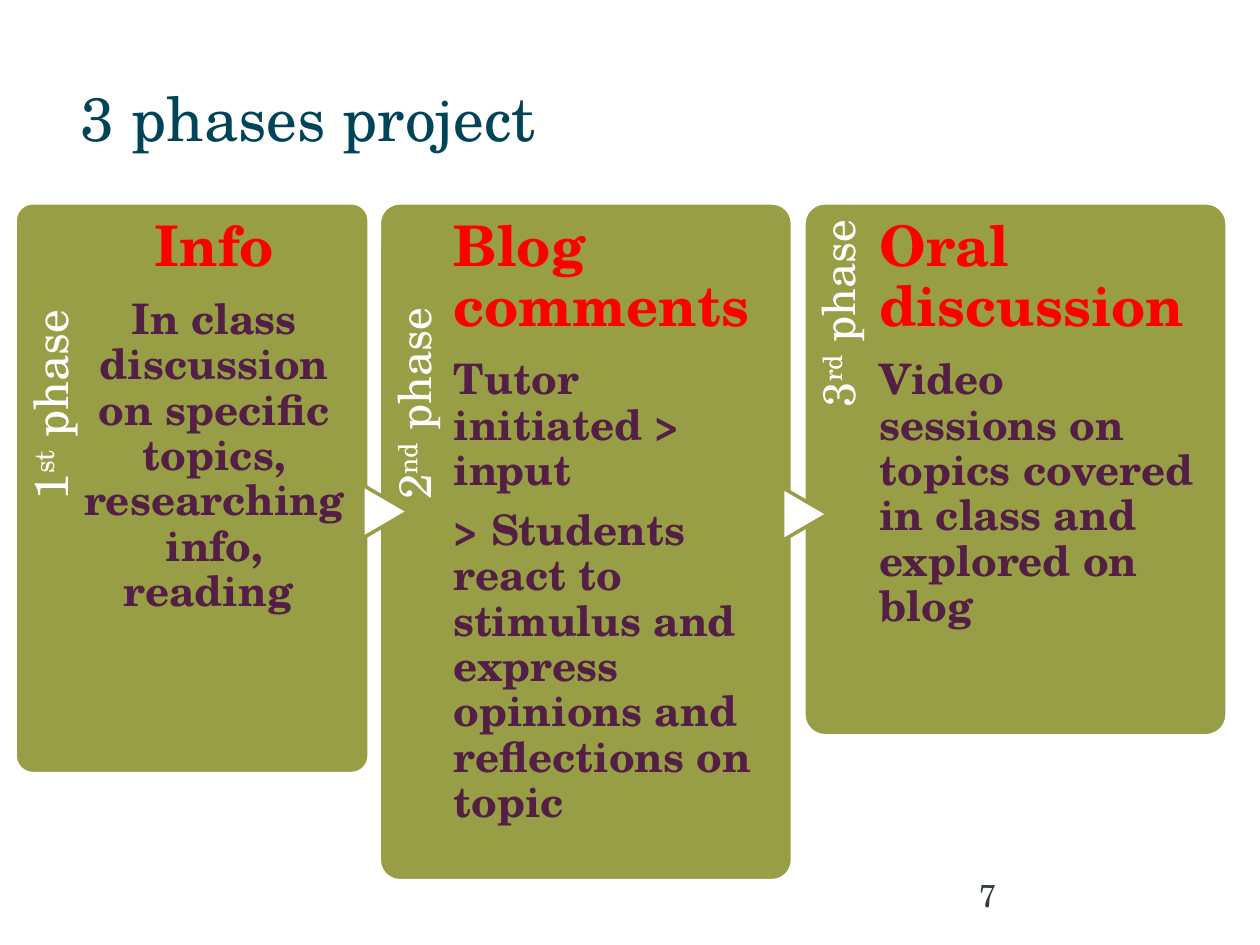
from pptx import Presentation
from pptx.dml.color import RGBColor
from pptx.enum.shapes import MSO_SHAPE as SHAPE
from pptx.enum.text import MSO_ANCHOR as ANCHOR, PP_ALIGN as ALIGN
from pptx.util import Emu, Pt

PX = 9144
FONT = "TeX Gyre Schola"
WHITE = RGBColor(0xFF, 0xFF, 0xFF)
OLIVE = RGBColor(0x97, 0x9E, 0x45)
RED = RGBColor(0xFF, 0x00, 0x00)
PLUM = RGBColor(0x53, 0x1F, 0x44)
TEAL = RGBColor(0x01, 0x43, 0x59)
SLATE = RGBColor(0x32, 0x3D, 0x43)

TOP = 161
PHASES = [
    dict(box=(12, TOP, 281, 453), number="1", suffix="st", label_size=27,
         label_gap=85, body=(53, 210), align=ALIGN.CENTER, heading="Info",
         lines=["In class discussion on specific topics, researching info, reading "]),
    dict(box=(301, TOP, 328, 538), number="2", suffix="nd", label_size=26,
         label_gap=83, body=(59, 244), align=ALIGN.LEFT, heading="Blog comments",
         lines=["Tutor initiated > input",
                "> Students react to stimulus and express opinions and reflections on topic"]),
    dict(box=(638, TOP, 336, 423), number="3", suffix="rd", label_size=26,
         label_gap=13, body=(60, 250), align=ALIGN.LEFT, heading="Oral discussion",
         lines=["Video sessions on topics covered in class and explored on blog"]),
]
ARROWS = [(285, 388, 42, 36), (618, 390, 42, 36)]


def emu(*lengths):
    return [Emu(round(v * PX)) for v in lengths]


def add_run(p, text, size, color, bold=False):
    r = p.add_run()
    r.text = text
    r.font.name = FONT
    r.font.size = Pt(size)
    r.font.bold = bold
    r.font.color.rgb = color
    return r


def add_text_box(s, box, insets=(10, 5, 10, 5)):
    sp = s.shapes.add_textbox(*emu(*box))
    tf = sp.text_frame
    tf.word_wrap = True
    set_insets(tf, insets)
    return sp, tf


def set_insets(tf, insets):
    tf.margin_left, tf.margin_top, tf.margin_right, tf.margin_bottom = emu(*insets)


def add_filled_shape(s, kind, box, fill, line):
    sp = s.shapes.add_shape(kind, *emu(*box))
    sp.shadow.inherit = False
    sp.fill.solid()
    sp.fill.fore_color.rgb = fill
    sp.line.color.rgb = line
    sp.line.width = Pt(2)
    return sp


def add_title(s, box):
    sp = s.shapes.title
    sp.left, sp.top, sp.width, sp.height = emu(*box)
    tf = sp.text_frame
    tf.vertical_anchor = ANCHOR.MIDDLE
    set_insets(tf, (14, 5, 10, 5))
    p = tf.paragraphs[0]
    p.alignment = ALIGN.LEFT
    add_run(p, "3 phases project", 35, TEAL)


def add_label(s, box, phase):
    x, y, w, h = box
    length, depth = 0.82 * h, 0.2 * w
    left = x + (depth - length) / 2
    top = y + (length - depth) / 2
    sp, tf = add_text_box(s, (left, top, length, depth),
                          (0, 10, phase["label_gap"], 0))
    sp.rotation = 270
    p = tf.paragraphs[0]
    p.alignment = ALIGN.RIGHT
    p.line_spacing = 0.9
    size = phase["label_size"]
    add_run(p, phase["number"], size, WHITE)
    r = add_run(p, phase["suffix"], size, WHITE)
    r.font._element.set("baseline", "30000")
    add_run(p, " phase", size, WHITE)


def add_body(s, box, phase):
    x, y, w, h = box
    offset, width = phase["body"]
    sp, tf = add_text_box(s, (x + offset, y, width, h), (0, 12, 0, 0))
    rows = [(phase["heading"], 32, RED)]
    rows += [(line, 24, PLUM) for line in phase["lines"]]
    for i, (text, size, color) in enumerate(rows):
        p = tf.add_paragraph() if i else tf.paragraphs[0]
        p.alignment = phase["align"]
        p.line_spacing = 0.9
        p.space_after = Pt(0.35 * size)
        add_run(p, text, size, color, bold=True)


def add_phase(s, phase):
    box = phase["box"]
    sp = add_filled_shape(s, SHAPE.ROUNDED_RECTANGLE, box, OLIVE, WHITE)
    sp.adjustments[0] = 0.05
    add_label(s, box, phase)
    add_body(s, box, phase)


def add_arrow(s, box):
    sp = add_filled_shape(s, SHAPE.FLOWCHART_EXTRACT, box, WHITE, OLIVE)
    sp.rotation = 90


def add_page_number(s, box):
    sp, tf = add_text_box(s, box)
    add_run(tf.paragraphs[0], "7", 18, SLATE)


def main():
    prs = Presentation()
    prs.slide_width, prs.slide_height = emu(1000, 750)
    s = prs.slides.add_slide(prs.slide_layouts[5])
    s.background.fill.solid()
    s.background.fill.fore_color.rgb = WHITE
    add_title(s, (50, 30, 900, 125))
    for phase in PHASES:
        add_phase(s, phase)
    for box in ARROWS:
        add_arrow(s, box)
    add_page_number(s, (767, 690, 233, 52))
    prs.save("out.pptx")


if __name__ == "__main__":
    main()
